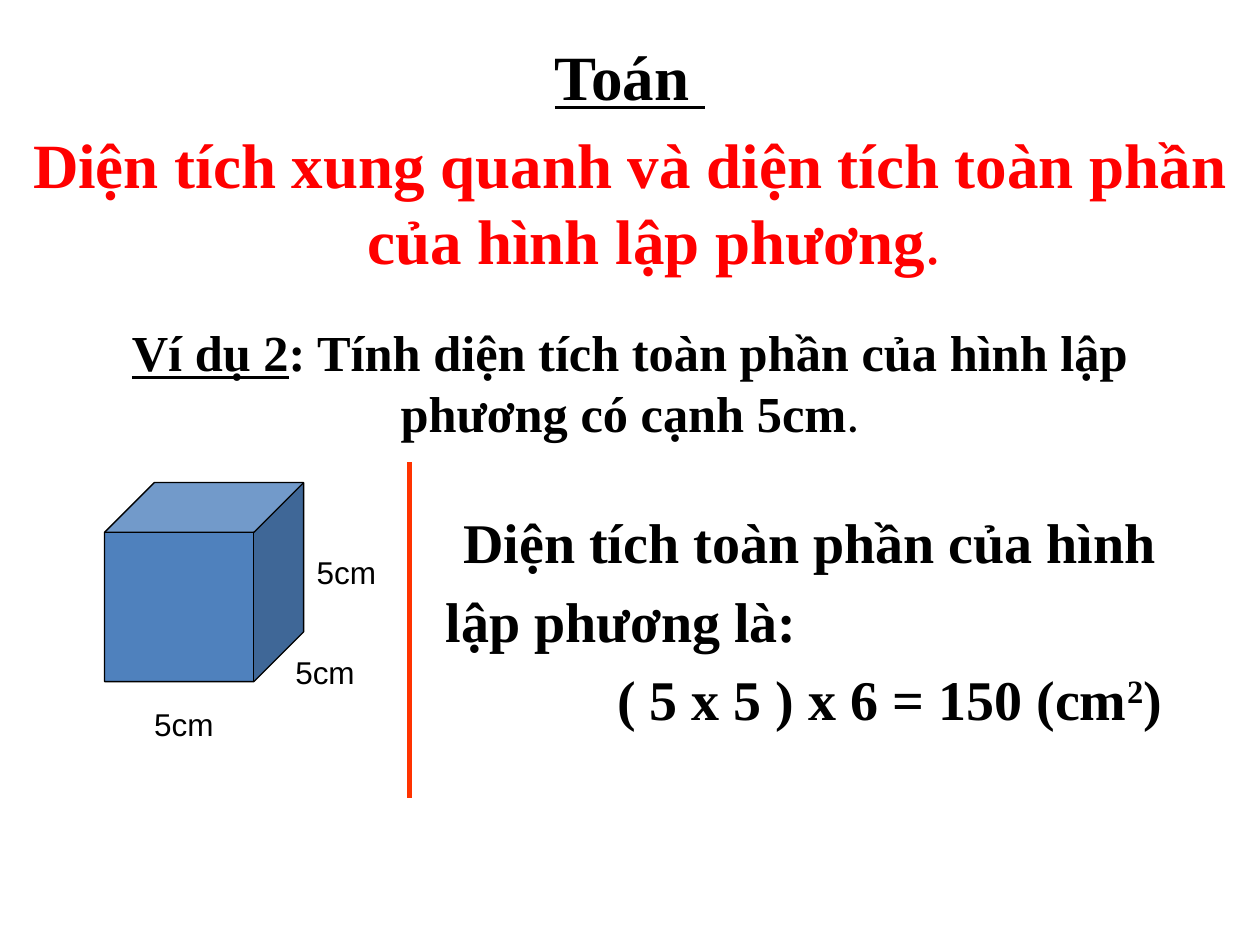
from lxml.etree import SubElement
from pptx import Presentation
from pptx.dml.color import RGBColor
from pptx.enum.shapes import MSO_CONNECTOR, MSO_SHAPE
from pptx.enum.text import MSO_ANCHOR, PP_ALIGN
from pptx.oxml.ns import qn
from pptx.util import Inches, Pt

BLACK = RGBColor(0, 0, 0)
RED = RGBColor(255, 0, 0)
ORANGE = RGBColor(0xFF, 0x33, 0)
BLUE = RGBColor(0x4F, 0x81, 0xBD)
SERIF = "Times New Roman"

HEADING = [
    [("Toán ", {"underline": True})],
    [("Diện tích xung quanh và diện tích toàn phần của hình lập phương", {"color": RED}),
     (".", {"color": RED, "bold": False})],
]
EXAMPLE = [[
    ("Ví dụ 2", {"underline": True}),
    (": Tính diện tích toàn phần của hình lập phương có cạnh 5cm", {}),
    (".", {"font": "Calibri", "bold": False}),
]]
SOLUTION = [
    [("Diện tích toàn phần của hình", {})],
    [("lập phương là:", {})],
    [("( 5 x 5 ) x 6 = 150 (cm", {}), ("2", {"superscript": True}), (")", {})],
]
SOLUTION_INDENTS = [(0, 0.25), (0, 0.11), (0, 1.47)]
EDGE_LABELS = [
    ("5cm", (1.17, 5.58, 0.58, 0.33)),
    ("5cm", (2.33, 5.17, 0.5, 0.33)),
    ("5cm", (2.5, 4.33, 0.5, 0.42)),
]


def add_run(paragraph, text, size, font=SERIF, color=BLACK, bold=True,
            underline=False, superscript=False):
    run = paragraph.add_run()
    run.text = text
    run.font.name = font
    run.font.size = Pt(size)
    run.font.bold = bold
    run.font.underline = underline
    run.font.color.rgb = color
    if superscript:
        run._r.get_or_add_rPr().set("baseline", "30000")


def add_text(slide, box, paragraphs, size, align=PP_ALIGN.CENTER,
             anchor=MSO_ANCHOR.MIDDLE, indents=None):
    frame = slide.shapes.add_textbox(*map(Inches, box)).text_frame
    frame.word_wrap = True
    frame.vertical_anchor = anchor
    for index, runs in enumerate(paragraphs):
        paragraph = frame.add_paragraph() if index else frame.paragraphs[0]
        paragraph.alignment = align
        paragraph.space_before = Pt(0.2 * size if index else 0)
        if indents:
            margin, indent = indents[index]
            properties = paragraph._p.get_or_add_pPr()
            properties.set("marL", str(Inches(margin)))
            properties.set("indent", str(Inches(indent)))
        for text, style in runs:
            add_run(paragraph, text, size, **style)


def add_edge_label(slide, text, box):
    label = slide.shapes.add_shape(MSO_SHAPE.ACTION_BUTTON_CUSTOM, *map(Inches, box))
    label.shadow.inherit = False
    label.fill.background()
    label.line.fill.background()
    frame = label.text_frame
    frame.word_wrap = False
    frame.margin_left = frame.margin_right = 0
    frame.vertical_anchor = MSO_ANCHOR.MIDDLE
    paragraph = frame.paragraphs[0]
    paragraph.alignment = PP_ALIGN.CENTER
    add_run(paragraph, text, 18, font="Arial", bold=False)


def add_cube(slide):
    cube = slide.shapes.add_shape(
        MSO_SHAPE.CUBE, Inches(0.83), Inches(3.83), Inches(1.58), Inches(1.58))
    cube.shadow.inherit = False
    cube.fill.solid()
    cube.fill.fore_color.rgb = BLUE
    cube.line.color.rgb = BLACK
    cube.line.width = Pt(0.75)


def add_divider(slide):
    divider = slide.shapes.add_connector(
        MSO_CONNECTOR.STRAIGHT, Inches(3.25), Inches(3.67), Inches(3.25), Inches(6.33))
    divider.line.color.rgb = ORANGE
    divider.line.width = Pt(3)
    SubElement(divider._element.spPr, qn("a:effectLst"))


def main():
    presentation = Presentation()
    presentation.slide_width = Inches(10)
    presentation.slide_height = Inches(7.5)
    slide = presentation.slides.add_slide(presentation.slide_layouts[6])

    add_text(slide, (0.5, 2.57, 9, 0.92), EXAMPLE, 28.8)
    add_text(slide, (3.33, 3.98, 6.33, 2.36), SOLUTION, 32, align=PP_ALIGN.LEFT,
             anchor=MSO_ANCHOR.TOP, indents=SOLUTION_INDENTS)
    add_cube(slide)
    for text, box in EDGE_LABELS:
        add_edge_label(slide, text, box)
    add_divider(slide)
    add_text(slide, (0, 0.25, 10, 2), HEADING, 36, anchor=MSO_ANCHOR.TOP,
             indents=[(0.38, -0.38)] * len(HEADING))

    presentation.save("out.pptx")


if __name__ == "__main__":
    main()
